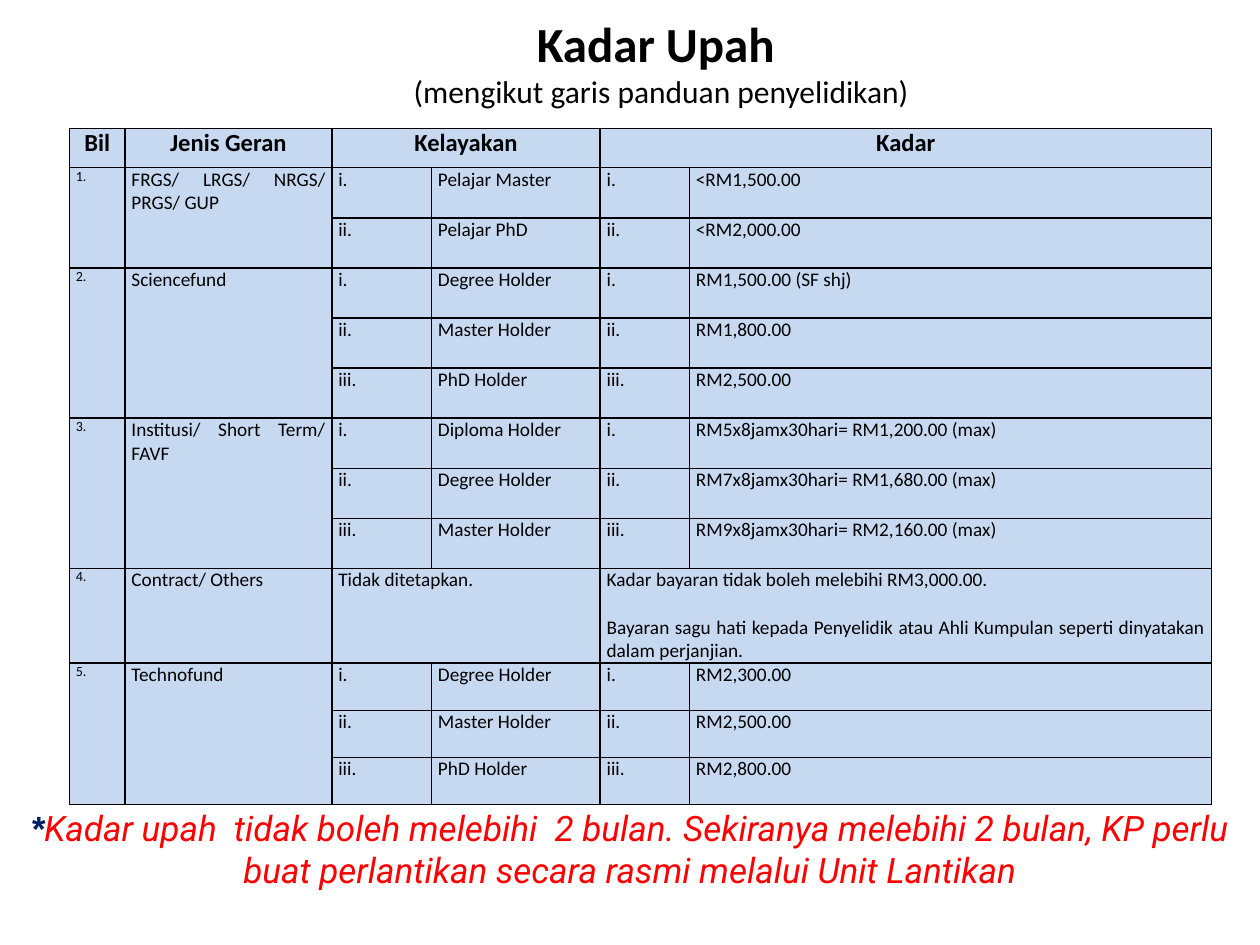
from lxml import etree
from pptx import Presentation
from pptx import util as u
from pptx.dml.color import RGBColor
from pptx.enum import text
from pptx.oxml import ns

COLORS = {"ink": "000000", "cell": "C6D9F1", "star": "002060", "note": "FF0000"}
FORMATS = {
    "title": {"size": u.Pt(28), "bold": True, "name": "Calibri"},
    "subtitle": {"size": u.Pt(18), "bold": False, "name": "Calibri"},
    "header": {"size": u.Pt(14), "bold": True, "name": "Calibri"},
    "number": {"size": u.Pt(8), "bold": False, "name": "Calibri"},
    "body": {"size": u.Pt(11), "bold": False, "name": "Calibri"},
    "star": {"size": u.Pt(20), "bold": True, "italic": True, "name": "Arial"},
    "note": {"size": u.Pt(20), "bold": False, "italic": True, "name": "Roboto"},
}
NUMERALS = ["i.", "ii.", "iii."]
COLUMNS = [1.12, 4.17, 2.01, 3.4, 1.8, 10.52]
HEADER_HEIGHT = 0.79
GRANTS = [
    ("FRGS/ LRGS/ NRGS/ PRGS/ GUP", 1.01,
     [("Pelajar Master", "<RM1,500.00"), ("Pelajar PhD", "<RM2,000.00")]),
    ("Sciencefund", 1.01,
     [("Degree Holder", "RM1,500.00 (SF shj)"), ("Master Holder", "RM1,800.00"),
      ("PhD Holder", "RM2,500.00")]),
    ("Institusi/ Short Term/ FAVF", 1.01,
     [("Diploma Holder", "RM5x8jamx30hari= RM1,200.00 (max)"),
      ("Degree Holder", "RM7x8jamx30hari= RM1,680.00 (max)"),
      ("Master Holder", "RM9x8jamx30hari= RM2,160.00 (max)")]),
    ("Contract/ Others", 1.91,
     [("Tidak ditetapkan.",
       "Kadar bayaran tidak boleh melebihi RM3,000.00.\n"
       "Bayaran sagu hati kepada Penyelidik atau Ahli Kumpulan seperti "
       "dinyatakan dalam perjanjian.")]),
    ("Technofund", 0.95,
     [("Degree Holder", "RM2,300.00"), ("Master Holder", "RM2,500.00"),
      ("PhD Holder", "RM2,800.00")]),
]


class SlideBuilder:
    """Holds the style and the current slide, and adds its elements."""

    def __init__(self, presentation):
        self.slide = presentation.slides.add_slide(presentation.slide_layouts[6])

    def run(self, paragraph, words, style, color="ink"):
        run = paragraph.add_run()
        run.text = words
        for key, value in FORMATS[style].items():
            setattr(run.font, key, value)
        run.font.color.rgb = RGBColor.from_string(COLORS[color])

    def textbox(self, left, top, width, height, anchor):
        shape = self.slide.shapes.add_textbox(*map(u.Cm, (left, top, width, height)))
        shape.text_frame.word_wrap = True
        shape.text_frame.vertical_anchor = anchor
        paragraph = shape.text_frame.paragraphs[0]
        paragraph.alignment = text.PP_ALIGN.CENTER
        return paragraph

    def table(self, left, top, widths, heights):
        frame = self.slide.shapes.add_table(
            len(heights), len(widths),
            *map(u.Cm, (left, top, sum(widths), sum(heights))))
        table = frame.table
        table.first_row = table.horz_banding = False
        for column, width in zip(table.columns, widths):
            column.width = u.Cm(width)
        for row, height in zip(table.rows, heights):
            row.height = u.Cm(height)
        for cell in table.iter_cells():
            self.style_cell(cell)
        return table

    def style_cell(self, cell):
        margins = {"margin_left": 0.13, "margin_right": 0.13,
                   "margin_top": 0, "margin_bottom": 0}
        for key, value in margins.items():
            setattr(cell, key, u.Cm(value))
        properties = cell._tc.get_or_add_tcPr()
        for side in ("a:lnL", "a:lnR", "a:lnT", "a:lnB"):
            line = etree.SubElement(properties, ns.qn(side), w=str(u.Pt(1)))
            fill = etree.SubElement(line, ns.qn("a:solidFill"))
            etree.SubElement(fill, ns.qn("a:srgbClr"), val=COLORS["ink"])
        cell.fill.solid()
        cell.fill.fore_color.rgb = RGBColor.from_string(COLORS["cell"])

    def write_cell(self, cell, words, style="body", alignment=text.PP_ALIGN.JUSTIFY):
        for index, line in enumerate(words.split("\n")):
            frame = cell.text_frame
            paragraph = frame.add_paragraph() if index else frame.paragraphs[0]
            paragraph.alignment = alignment
            if index:
                paragraph.space_before = u.Pt(13.4)
            self.run(paragraph, line, style)

    def merge(self, table, row, column, last_row, last_column):
        if (row, column) != (last_row, last_column):
            table.cell(row, column).merge(table.cell(last_row, last_column))

    def rate_table(self, left, top):
        heights = [HEADER_HEIGHT] + [h for _, h, rates in GRANTS for _ in rates]
        table = self.table(left, top, COLUMNS, heights)
        headings = {0: "Bil", 1: "Jenis Geran", 2: "Kelayakan", 4: "Kadar"}
        for column, heading in headings.items():
            self.merge(table, 0, column, 0, column + (column >= 2))
            self.write_cell(table.cell(0, column), heading, "header",
                            text.PP_ALIGN.CENTER)
        row = 1
        for number, (grant, _, rates) in enumerate(GRANTS, 1):
            for column in (0, 1):
                self.merge(table, row, column, row + len(rates) - 1, column)
            self.write_cell(table.cell(row, 0), f"{number}.", "number")
            self.write_cell(table.cell(row, 1), grant)
            for numeral, pair in zip(NUMERALS, rates):
                for column, words in zip((2, 4), pair):
                    if len(rates) == 1:
                        self.merge(table, row, column, row, column + 1)
                        self.write_cell(table.cell(row, column), words)
                    else:
                        self.write_cell(table.cell(row, column), numeral)
                        self.write_cell(table.cell(row, column + 1), words)
                row += 1


def main():
    presentation = Presentation()
    presentation.slide_width, presentation.slide_height = u.Cm(25.4), u.Cm(19.05)
    builder = SlideBuilder(presentation)

    title = builder.textbox(1.9, 0.15, 22.86, 2.2, text.MSO_ANCHOR.MIDDLE)
    builder.run(title, "Kadar Upah ", "title")
    title.add_line_break()
    builder.run(title, "(mengikut garis panduan penyelidikan)", "subtitle")

    builder.rate_table(1.4, 2.59)

    note = builder.textbox(0, 16.13, 25.4, 1.96, text.MSO_ANCHOR.TOP)
    builder.run(note, "*", "star", "star")
    builder.run(note, "Kadar upah  tidak boleh melebihi  2 bulan. Sekiranya melebihi "
                "2 bulan, KP perlu buat perlantikan secara rasmi melalui Unit Lantikan",
                "note", "note")
    presentation.save("out.pptx")


if __name__ == "__main__":
    main()
